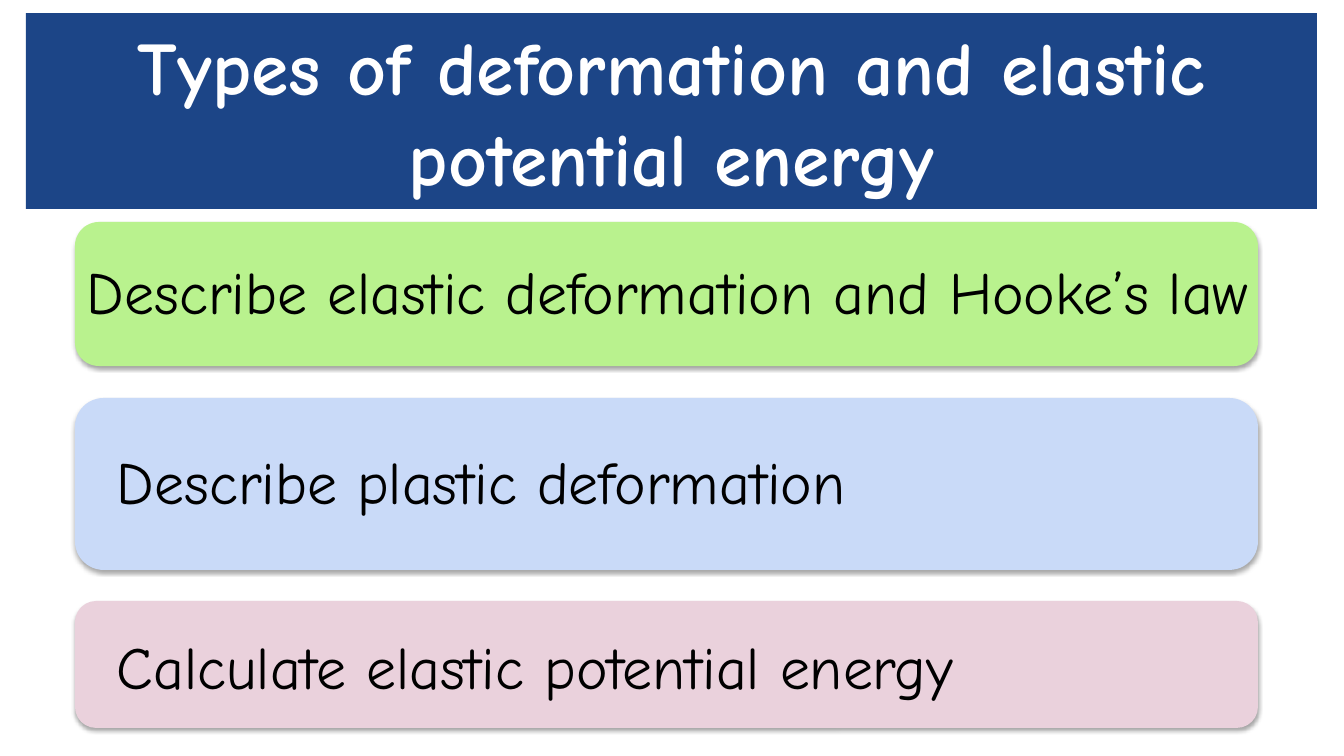
from lxml import etree
from pptx import Presentation
from pptx import util as u
from pptx.dml.color import RGBColor
from pptx.enum import shapes, text
from pptx.oxml.ns import qn

FONT = "Comic Neue"
COLOURS = {
    "title_bar": "1C4587",
    "title_text": "FFFFFF",
    "text": "000000",
    "green": "B9F28E",
    "blue": "C9DAF8",
    "pink": "EAD1DC",
}
TITLE = "Types of deformation and elastic potential energy"
TITLE_BOX = (26, 13, 1291, 196)
CARD_LEFT, CARD_WIDTH = 75, 1183

# wording, colour, card top and height, text box (left, top, width, height)
OBJECTIVES = [
    ("Describe elastic deformation and Hooke’s law", "green", 222, 144, (53, 222, 1257, 146)),
    ("Describe plastic deformation", "blue", 398, 172, (83, 433, 1167, 104)),
    ("Calculate elastic potential energy", "pink", 601, 127, (83, 598, 1161, 144)),
]


def px(length):
    return u.Emu(round(length * 914400 / 100.8))


def add_box(slide, kind, box, colour):
    shape = slide.shapes.add_shape(kind, *map(px, box))
    shape.fill.solid()
    shape.fill.fore_color.rgb = RGBColor.from_string(COLOURS[colour])
    shape.line.fill.background()
    shape.shadow.inherit = False
    return shape


def add_shadow(shape):
    effects = shape._element.spPr.find(qn("a:effectLst"))
    shadow = etree.SubElement(effects, qn("a:outerShdw"), blurRad=str(u.Pt(3.1)),
                              dist=str(u.Pt(1.8)), dir="5400000", rotWithShape="0")
    black = etree.SubElement(shadow, qn("a:srgbClr"), val="000000")
    etree.SubElement(black, qn("a:alpha"), val="35000")


def write(shape, wording, size, colour, inset_x, inset_y):
    frame = shape.text_frame
    frame.word_wrap = True
    frame.vertical_anchor = text.MSO_ANCHOR.MIDDLE
    frame.margin_left = frame.margin_right = px(inset_x)
    frame.margin_top = frame.margin_bottom = px(inset_y)
    paragraph = frame.paragraphs[0]
    paragraph.text = wording
    paragraph.font.name = FONT
    paragraph.font.size = u.Pt(size)
    paragraph.font.color.rgb = RGBColor.from_string(COLOURS[colour])
    return paragraph


def main():
    presentation = Presentation()
    presentation.slide_width, presentation.slide_height = px(1344), px(756)
    slide = presentation.slides.add_slide(presentation.slide_layouts[6])

    for wording, colour, top, height, text_box in OBJECTIVES:
        card = add_box(slide, shapes.MSO_SHAPE.ROUNDED_RECTANGLE,
                       (CARD_LEFT, top, CARD_WIDTH, height), colour)
        add_shadow(card)
        label = slide.shapes.add_textbox(*map(px, text_box))
        paragraph = write(label, wording, 42.7, "text", 34, 0)
        paragraph.line_spacing = 0.9

    title = add_box(slide, shapes.MSO_SHAPE.RECTANGLE, TITLE_BOX, "title_bar")
    paragraph = write(title, TITLE, 54, "title_text", 13, 7)
    paragraph.alignment = text.PP_ALIGN.CENTER
    paragraph.font.bold = True

    presentation.save("out.pptx")


if __name__ == "__main__":
    main()
